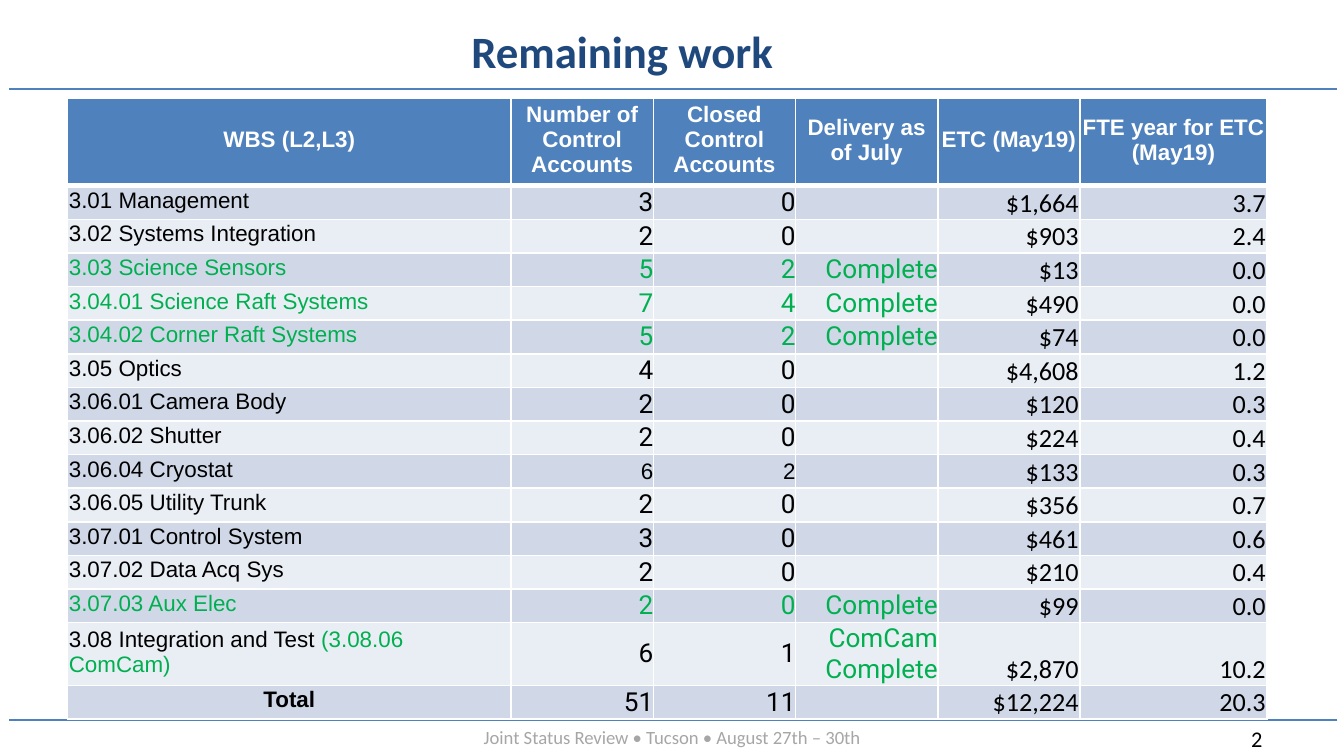
from lxml import etree
from pptx import Presentation
from pptx.dml.color import RGBColor
from pptx.enum import shapes, text
from pptx.oxml import ns
from pptx.util import Pt

BLUE = RGBColor(0x4F, 0x81, 0xBD)
NAVY = RGBColor(0x1F, 0x49, 0x7D)
GREEN = RGBColor(0x00, 0xB0, 0x50)
GREY = RGBColor(0xA6, 0xA6, 0xA6)
BLACK = RGBColor(0, 0, 0)
WHITE = RGBColor(0xFF, 0xFF, 0xFF)
BANDS = [RGBColor(0xD0, 0xD8, 0xE8), RGBColor(0xE9, 0xED, 0xF4)]

HEADERS = ["WBS (L2,L3)", "Number of Control Accounts", "Closed Control Accounts",
           "Delivery as of July", "ETC (May19)", "FTE year for ETC (May19)"]
ROWS = [
    ("3.01 Management", "3", "0", "", "$1,664", "3.7"),
    ("3.02 Systems Integration", "2", "0", "", "$903", "2.4"),
    ("3.03 Science Sensors", "5", "2", "Complete", "$13", "0.0"),
    ("3.04.01 Science Raft Systems", "7", "4", "Complete", "$490", "0.0"),
    ("3.04.02 Corner Raft Systems", "5", "2", "Complete", "$74", "0.0"),
    ("3.05 Optics", "4", "0", "", "$4,608", "1.2"),
    ("3.06.01 Camera Body", "2", "0", "", "$120", "0.3"),
    ("3.06.02 Shutter", "2", "0", "", "$224", "0.4"),
    ("3.06.04 Cryostat", "6", "2", "", "$133", "0.3"),
    ("3.06.05 Utility Trunk", "2", "0", "", "$356", "0.7"),
    ("3.07.01 Control System", "3", "0", "", "$461", "0.6"),
    ("3.07.02 Data Acq Sys", "2", "0", "", "$210", "0.4"),
    ("3.07.03 Aux Elec", "2", "0", "Complete", "$99", "0.0"),
    ("3.08 Integration and Test |(3.08.06 ComCam)", "6", "1", "ComCam Complete",
     "$2,870", "10.2"),
    ("Total", "51", "11", "", "$12,224", "20.3"),
]
COLUMN_WIDTHS = [237.6, 76.2, 76.2, 76.2, 76.2, 100.2]
ROW_HEIGHTS = [43.4] + [17.8] * 13 + [33.2, 17.8]
LEFT, CENTER, RIGHT = text.PP_ALIGN.LEFT, text.PP_ALIGN.CENTER, text.PP_ALIGN.RIGHT
MIDDLE, BOTTOM = text.MSO_ANCHOR.MIDDLE, text.MSO_ANCHOR.BOTTOM


def add_run(p, words, name, size, color, bold=False):
    r = p.add_run()
    r.text = words
    for key, value in {"name": name, "size": Pt(size), "bold": bold}.items():
        setattr(r.font, key, value)
    r.font.color.rgb = color


def set_borders(cell, bottom_width):
    """Draw white lines round a cell, 1 pt except for the bottom one."""
    tc_pr = cell._tc.get_or_add_tcPr()
    for side in "LRTB":
        width = bottom_width if side == "B" else 1
        ln = etree.SubElement(tc_pr, ns.qn(f"a:ln{side}"), w=str(Pt(width)))
        fill = etree.SubElement(ln, ns.qn("a:solidFill"))
        etree.SubElement(fill, ns.qn("a:srgbClr"), val=str(WHITE))


prs = Presentation()
prs.slide_width, prs.slide_height = Pt(720), Pt(405)
s = prs.slides.add_slide(prs.slide_layouts[5])

# Title
title = s.shapes.title
title.left, title.top, title.width, title.height = Pt(84.2), Pt(10.8), Pt(498.2), Pt(33.1)
title.text_frame.vertical_anchor = MIDDLE
p = title.text_frame.paragraphs[0]
p.alignment = CENTER
add_run(p, "Remaining work", "Calibri", 24, NAVY, True)

# Rules under the title and above the footer
for y in (47.8, 385.6):
    rule = s.shapes.add_connector(shapes.MSO_CONNECTOR.STRAIGHT, Pt(716.4), Pt(y), Pt(5), Pt(y))
    rule.line.color.rgb = BLUE
    rule.line.width = Pt(1)
    etree.SubElement(rule._element.spPr, ns.qn("a:effectLst"))

# Footer and slide number
for words, left, width, height, align, size, color in [
    ("Joint Status Review • Tucson • August 27th – 30th", 36, 648, 19.4, CENTER, 10, GREY),
    ("2", 663.1, 44.6, 21.6, LEFT, 12, BLACK),
]:
    tf = s.shapes.add_textbox(Pt(left), Pt(385.2), Pt(width), Pt(height)).text_frame
    tf.word_wrap = True
    tf.paragraphs[0].alignment = align
    add_run(tf.paragraphs[0], words, "Calibri", size, color)

# Table
table = s.shapes.add_table(len(ROWS) + 1, len(HEADERS), Pt(36.2), Pt(52.7),
                           Pt(sum(COLUMN_WIDTHS)), Pt(sum(ROW_HEIGHTS))).table
table.horz_banding = False
for column, width in zip(table.columns, COLUMN_WIDTHS):
    column.width = Pt(width)
for row, height in zip(table.rows, ROW_HEIGHTS):
    row.height = Pt(height)

for i, values in enumerate([HEADERS] + ROWS):
    header, total = i == 0, values[0] == "Total"
    done = "Complete" == values[3]
    for j, words in enumerate(values):
        cell = table.cell(i, j)
        name, size, color, align, anchor = "Arial", 12, BLACK, RIGHT, MIDDLE
        side, bottom = 0.7, 2.9
        if header:
            color, align = WHITE, CENTER
        elif j == 0:
            align = CENTER if total else LEFT
        elif j < 4:
            side = bottom = 0
            if values[0] != "3.06.04 Cryostat" or j == 3:
                name, size = "Roboto", 14
        else:
            name, size, anchor, bottom = "Calibri", 14, BOTTOM, 0
        if not header and (j == 3 or done and j < 3):
            color = GREEN

        for key, value in {"margin_left": Pt(side), "margin_right": Pt(side),
                           "margin_top": Pt(side), "margin_bottom": Pt(bottom),
                           "vertical_anchor": anchor}.items():
            setattr(cell, key, value)
        set_borders(cell, 3 if header else 1)
        cell.fill.solid()
        cell.fill.fore_color.rgb = BLUE if header else BANDS[(i - 1) % 2]

        p = cell.text_frame.paragraphs[0]
        p.alignment = align
        if words:
            main, _, delivered = words.partition("|")
            add_run(p, main, name, size, color, header or total and j == 0)
            if delivered:
                add_run(p, delivered, name, size, GREEN)
        else:
            etree.SubElement(p._p, ns.qn("a:endParaRPr"), sz=str(size * 100))

prs.save("out.pptx")
